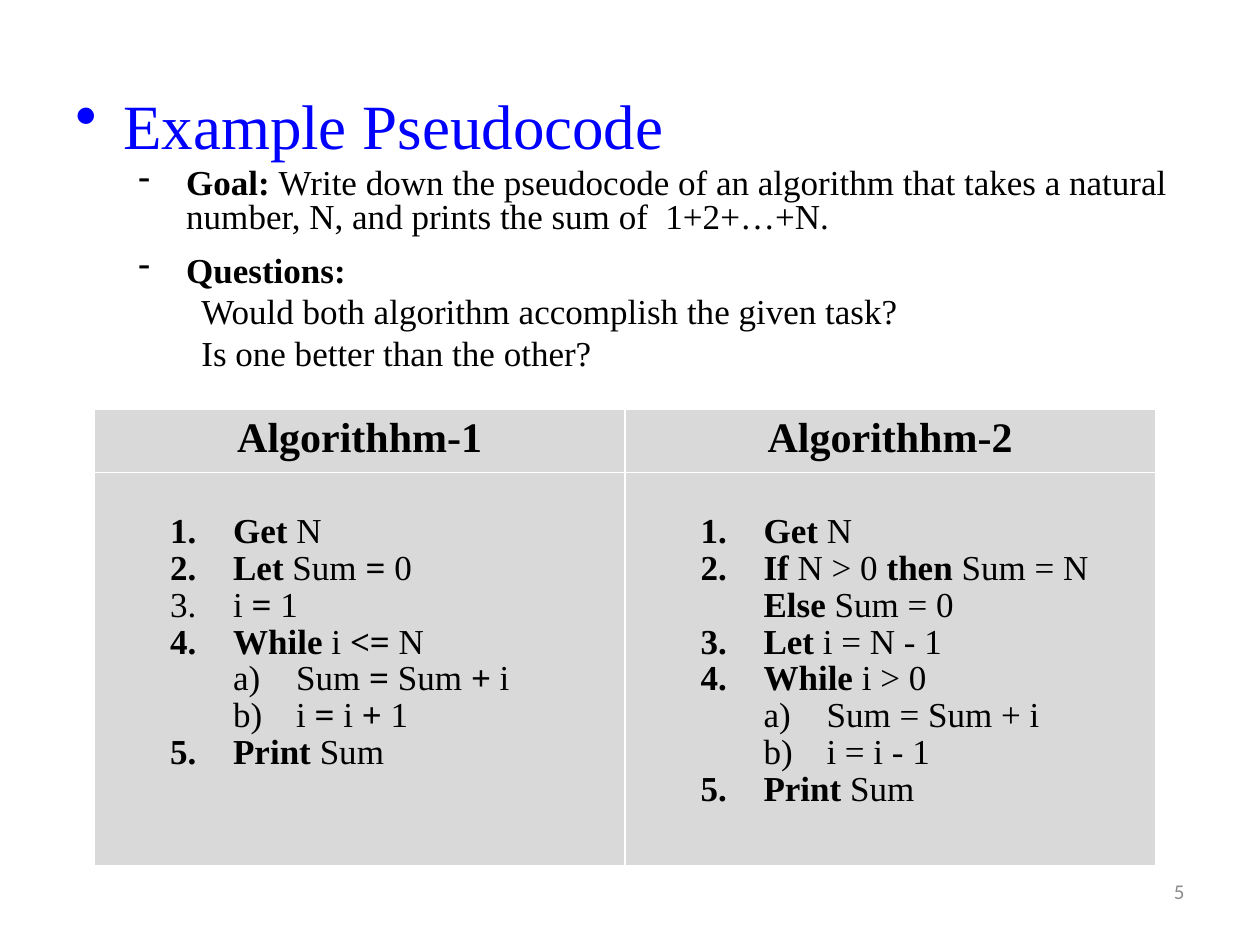
from lxml import etree
from pptx import Presentation
from pptx.dml.color import RGBColor
from pptx.enum.text import MSO_ANCHOR, PP_ALIGN
from pptx.oxml.ns import qn
from pptx.util import Inches, Pt

CENTER, RIGHT = PP_ALIGN.CENTER, PP_ALIGN.RIGHT
MIDDLE = MSO_ANCHOR.MIDDLE
BLUE = RGBColor(0x00, 0x00, 0xFF)
BLACK = RGBColor(0x00, 0x00, 0x00)
GRAY = RGBColor(0x8C, 0x8C, 0x8C)
LIGHT_GRAY = RGBColor(0xD9, 0xD9, 0xD9)
SERIF = "Times New Roman"

OUTLINE = [
    (0, "•", 36, BLUE, 4.5, "Example Pseudocode"),
    (1, "-", 20, BLACK, 4.5,
     "*Goal: *Write down the pseudocode of an algorithm that takes a natural "
     "number, N, and prints the sum of  1+2+…+N."),
    (1, "-", 20, BLACK, 11.5, "*Questions:*"),
    (2, None, 20, BLACK, 4.5, "Would both algorithm accomplish the given task?"),
    (2, None, 20, BLACK, 4.5, "Is one better than the other?"),
]
NUMBER, LETTER = "arabicPeriod", "alphaLcParenR"
ALGORITHMS = {
    "Algorithhm-1": [
        (1, NUMBER, "*Get* N"),
        (1, NUMBER, "*Let* Sum *=* 0"),
        (1, NUMBER, "i *=* 1"),
        (1, NUMBER, "*While* i *<=* N"),
        (2, LETTER, "Sum *=* Sum *+* i"),
        (2, LETTER, "i *=* i *+* 1"),
        (1, NUMBER, "*Print* Sum"),
    ],
    "Algorithhm-2": [
        (1, NUMBER, "*Get* N"),
        (1, NUMBER, "*If* N > 0 *then* Sum = N"),
        (2, None, "*Else* Sum = 0"),
        (1, NUMBER, "*Let* i = N - 1"),
        (1, NUMBER, "*While* i > 0"),
        (2, LETTER, "Sum = Sum + i"),
        (2, LETTER, "i = i - 1"),
        (1, NUMBER, "*Print* Sum"),
    ],
}


def write_line(frame, index, text, level, size, color, space):
    paragraph = frame.paragraphs[0] if index == 0 else frame.add_paragraph()
    paragraph.level = level
    paragraph.line_spacing = 0.8
    paragraph.space_before = Pt(space)
    paragraph.font.name = SERIF
    paragraph.font.size = Pt(size)
    paragraph.font.color.rgb = color
    for position, part in enumerate(text.split("*")):
        if part:
            run = paragraph.add_run()
            run.text = part
            run.font.bold = position % 2 == 1
    return paragraph


def set_bullet(paragraph, left, hanging, tag, **attributes):
    properties = paragraph._p.get_or_add_pPr()
    properties.set("marL", str(Inches(left)))
    properties.set("indent", str(-Inches(hanging)))
    bullet = etree.Element(qn(tag), attributes)
    defaults = properties.find(qn("a:defRPr"))
    if defaults is None:
        properties.append(bullet)
    else:
        defaults.addprevious(bullet)


presentation = Presentation()
presentation.slide_width = Inches(10)
presentation.slide_height = Inches(7.5)
width, height = presentation.slide_width, presentation.slide_height
slide = presentation.slides.add_slide(presentation.slide_layouts[6])

number_box = slide.shapes.add_textbox(
    int(width * 0.717), int(height * 0.916), int(width * 0.233), int(height * 0.053))
number_box.text_frame.vertical_anchor = MIDDLE
paragraph = number_box.text_frame.paragraphs[0]
paragraph.text = "5"
paragraph.alignment = RIGHT
paragraph.font.name = "Calibri"
paragraph.font.size = Pt(12)
paragraph.font.color.rgb = GRAY

outline_box = slide.shapes.add_textbox(
    int(width * 0.05), int(height * 0.1), int(width * 0.9), int(height * 0.323))
outline_box.text_frame.word_wrap = True
for index, (level, mark, size, color, space, text) in enumerate(OUTLINE):
    paragraph = write_line(outline_box.text_frame, index, text, level, size, color, space)
    left = 0.38 + 0.5 * level
    if mark:
        set_bullet(paragraph, left, 0.38, "a:buChar", char=mark)
    else:
        set_bullet(paragraph, left, 0.38, "a:buNone")

table = slide.shapes.add_table(
    2, len(ALGORITHMS), int(width * 0.075), int(height * 0.433),
    int(width * 0.842), int(height * 0.478)).table
table.rows[0].height = Inches(0.46)
table.rows[1].height = Inches(3.12)
for column, (heading, steps) in enumerate(ALGORITHMS.items()):
    header, body = table.cell(0, column), table.cell(1, column)
    for cell in (header, body):
        cell.fill.solid()
        cell.fill.fore_color.rgb = LIGHT_GRAY
    paragraph = header.text_frame.paragraphs[0]
    paragraph.text = heading
    paragraph.alignment = CENTER
    paragraph.font.name = SERIF
    paragraph.font.size = Pt(24)
    paragraph.font.bold = True
    paragraph.font.color.rgb = BLACK
    body.margin_top = Inches(0.37)
    for index, (level, numbering, text) in enumerate(steps):
        paragraph = write_line(body.text_frame, index, text, level, 20, BLACK, 3.3)
        left = 0.5 + 0.5 * level
        if numbering:
            set_bullet(paragraph, left, 0.5, "a:buAutoNum", type=numbering)
        else:
            set_bullet(paragraph, left, 0.5, "a:buNone")

presentation.save("out.pptx")
